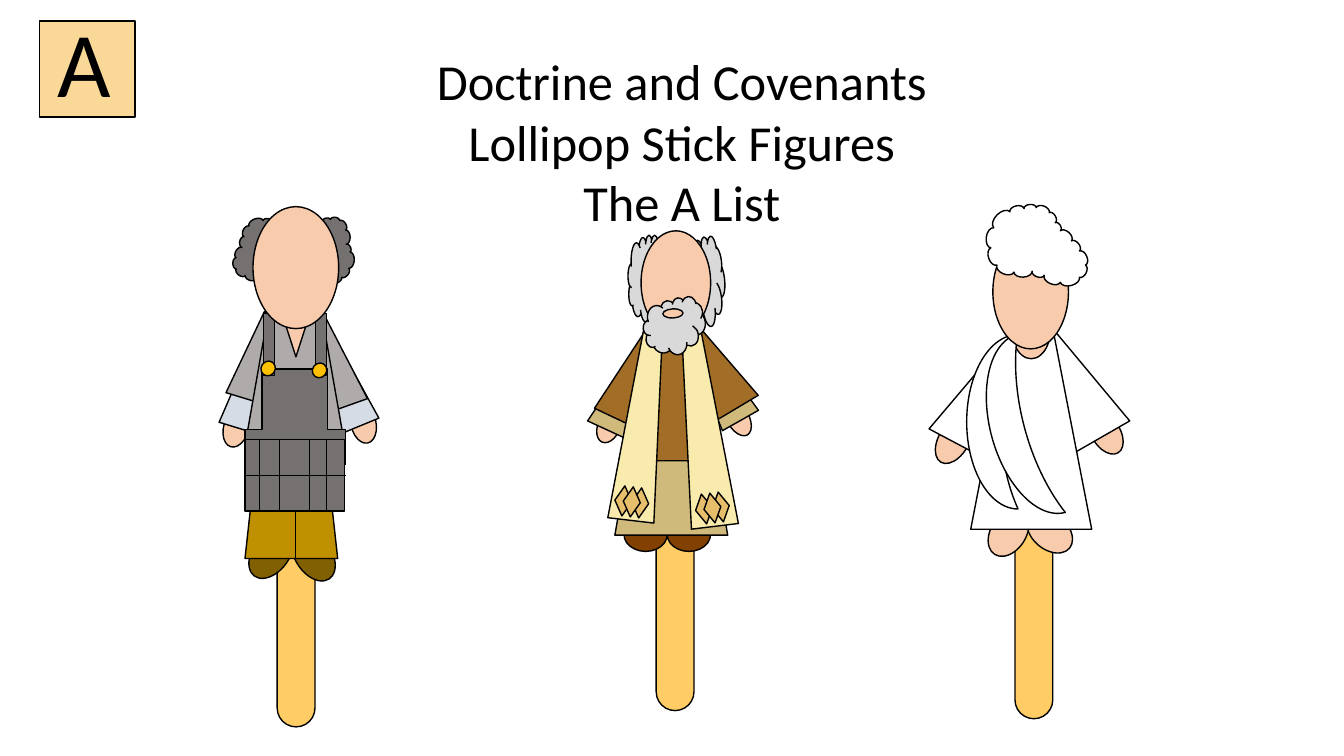
import math
from lxml import etree
from pptx import Presentation
from pptx import util as u
from pptx.dml.color import RGBColor
from pptx.enum import shapes, text
from pptx.oxml.ns import qn

Pt = u.Pt
M = shapes.MSO_SHAPE
OVAL, TRAP, CLOUD, MOON = M.OVAL, M.TRAPEZOID, M.CLOUD, M.MOON
RECT, DIAMOND, TRIANGLE = M.RECTANGLE, M.DIAMOND, M.ISOSCELES_TRIANGLE
LINE, OUTLINE = "line", "outline"

BLACK = RGBColor(0x00, 0x00, 0x00)
WHITE = RGBColor(0xFF, 0xFF, 0xFF)
SKIN = RGBColor(0xF8, 0xCB, 0xAD)
STICK = RGBColor(0xFF, 0xCC, 0x66)
BADGE = RGBColor(0xFA, 0xD9, 0x98)
SHOE = RGBColor(0x82, 0x41, 0x00)
TUNIC = RGBColor(0xCF, 0xB9, 0x7B)
COAT = RGBColor(0xA2, 0x6D, 0x26)
STOLE = RGBColor(0xF9, 0xEB, 0xAD)
BEARD = RGBColor(0xD9, 0xD9, 0xD9)
GEM = RGBColor(0xE7, 0xBE, 0x6B)
BOOT = RGBColor(0x80, 0x60, 0x00)
TROUSERS = RGBColor(0xBF, 0x90, 0x00)
CUFF = RGBColor(0xD6, 0xDC, 0xE5)
SHIRT = RGBColor(0xAF, 0xAB, 0xAB)
APRON = RGBColor(0x76, 0x71, 0x71)
BUTTON = RGBColor(0xFF, 0xC0, 0x00)

white_hair = [(740.2, 148.3), (749.5, 151.9), (753.8, 159.1), (757.4, 164.9), (765.4, 172.1),
              (771.1, 179.3), (775.4, 189.4), (771.1, 198), (757.4, 201.6), (745.9, 196.6),
              (737.3, 193.7), (724.3, 194.4), (712.1, 189.4), (707.8, 177.1), (709.9, 162.7),
              (721.4, 151.2), (731.5, 149)]
left_hair = [(195.8, 157.7), (202.3, 161.3), (203.8, 169.2), (200.2, 178.6), (200.9, 185),
             (195.1, 195.1), (187.9, 198.7), (178.6, 198.7), (171.4, 195.1), (169.9, 187.2),
             (172.8, 179.3), (172.8, 171.4), (175, 163.4), (184.3, 157.7), (190.8, 157.7)]
right_hair = [(231.1, 201.6), (224.6, 200.2), (221, 193), (221.8, 182.9), (219.6, 177.1),
              (221.8, 165.6), (227.5, 159.8), (236.9, 157.7), (244.8, 159.1), (248.4, 166.3),
              (248.4, 175), (249.8, 182.2), (249.8, 190.8), (243.4, 198.7), (236.9, 200.9)]
apron_bib = [(187.2, 263.5), (234, 263.5), (234, 306.7), (247, 306.7),
             (247, 331.9), (175, 331.9), (175, 306.7), (187.2, 306.7)]

robed_man = [
    (OVAL, 774, 299.5, 32.4, 20.2, 58.2, SKIN),
    (OVAL, 663.1, 303.8, 36, 21.6, 120.1, SKIN),
    (TRAP, 680.4, 239, 45.4, 82.8, 27.9, WHITE, 0.4),
    (TRAP, 740.9, 236.9, 49, 81.4, 330.1, WHITE, 0.29),
    (OVAL, 731.5, 367.2, 36.7, 25.2, 39.8, SKIN),
    (OVAL, 702, 367.9, 36.7, 25.2, 302.7, SKIN),
    (TRAP, 693.4, 239.8, 86.4, 138.2, 0, WHITE, 0.31),
    (OVAL, 722.9, 215.3, 27.4, 41, 0, SKIN),
    (MOON, 690.5, 239, 36.7, 124.6, 0, WHITE, 0.66),
    (MOON, 707.8, 241.2, 36.7, 131.8, 345, WHITE, 0.66),
    (OVAL, 709.2, 167.8, 54, 81.4, 0, SKIN),
    (OUTLINE, white_hair, 0.3, 0, WHITE),
]

bearded_man = [
    (OVAL, 445.7, 369.4, 31, 24.5, 0, SHOE),
    (OVAL, 476.6, 369.4, 31, 24.5, 0, SHOE),
    (OVAL, 427, 292.3, 15.8, 24.5, 23.3, SKIN),
    (TRAP, 433.4, 238.3, 40.3, 74.2, 24.7, TUNIC, 0.3),
    (TRAP, 437.8, 233.3, 31.7, 68.4, 25.4, COAT, 0.3),
    (TRAP, 439.2, 242.6, 80.6, 139.7, 0, TUNIC, 0.3),
    (TRAP, 442.1, 233.3, 74.2, 95.8, 0, COAT, 0.3),
    (TRAP, 442.1, 234, 33.1, 138.2, 6.7, STOLE, 0.3),
    (CLOUD, 448.6, 167.8, 24.5, 61.9, 0, BEARD),
    (CLOUD, 489.6, 169.2, 28.1, 64.1, 352.9, BEARD),
    (OVAL, 457.9, 164.9, 49.7, 74.2, 0, SKIN),
    (OVAL, 519.1, 284.4, 15.8, 28.1, 330.9, SKIN),
    (TRAP, 495.4, 229, 29.5, 76.3, 330.5, TUNIC, 0.3),
    (TRAP, 492.5, 234.7, 36, 61.2, 329.2, COAT, 0.3),
    (TRAP, 485.3, 234.7, 33.8, 141.8, 353.1, STOLE, 0.3),
    (CLOUD, 459.4, 213.1, 44.6, 40.3, 352.9, BEARD),
    (OVAL, 477.4, 216.7, 6.5, 14.4, 87.1, SKIN),
]
for x, y, slope, rot in [(439.2, 347, 0.12, 5.7), (496.8, 352.8, -0.12, 350)]:
    for dx in (0, 12, 6):
        bearded_man.append((DIAMOND, x + dx, y + slope * dx, 12.2, 21.6, rot, GEM))

apron_man = [
    (OVAL, 180.7, 375.1, 25.9, 40.3, 36.6, BOOT),
    (OVAL, 211, 376.6, 25.9, 40.3, 326.3, BOOT),
    (OVAL, 250.6, 288, 18, 28.8, 347.4, SKIN),
    (OVAL, 159.8, 290.9, 18, 28.8, 16, SKIN),
    (TRAP, 175, 308.2, 66.2, 90.7, 0, TROUSERS, 0.15),
    (TRAP, 218.9, 226.1, 37.4, 82.8, 337.6, CUFF),
    (TRAP, 214.6, 223.9, 37.4, 69.1, 340.4, SHIRT),
    (TRAP, 167.8, 226.1, 37.4, 82.8, 17, CUFF),
    (TRAP, 169.9, 223.9, 37.4, 63.4, 17, SHIRT),
    (TRAP, 175, 216.7, 71.3, 101.5, 0, SHIRT),
    (TRIANGLE, 200.9, 222.5, 20.9, 32.4, 180, SKIN),
    (LINE, 211, 348.5, 211, 398.9),
    (OUTLINE, apron_bib, 0, 0, APRON),
    (RECT, 169.9, 241.9, 44.6, 7.9, 270, APRON),
    (RECT, 207.4, 241.9, 43.9, 7.9, 270, APRON),
    (OUTLINE, left_hair, 0.3, 10, APRON),
    (OUTLINE, right_hair, 0.3, 173.9, APRON),
    (OVAL, 180.7, 147.6, 61.2, 87.1, 0, SKIN),
    (RECT, 175, 313.9, 71.3, 51.1, 0, APRON),
    (OVAL, 186.5, 257.8, 10.1, 10.8, 36.6, BUTTON),
    (OVAL, 223.2, 259.2, 10.1, 10.8, 36.6, BUTTON),
    (LINE, 175, 339.8, 247, 339.8),
]
apron_man += [(LINE, x, 313.9, x, 364.3) for x in (185, 199.4, 221, 233.3)]

sticks = [(M.ROUNDED_RECTANGLE, x, y, 27, 225.4, 0, STICK, 0.5)
          for x, y in [(198, 293.8), (725, 288), (468.7, 282.2)]]
badge = [(RECT, 28.1, 15.1, 68.4, 68.4, 0, BADGE)]


def scallop(points, bulge):
    steps = 8 if bulge else 1
    curve = []
    for (x1, y1), (x2, y2) in zip(points, points[1:] + points[:1]):
        dx, dy = x2 - x1, y2 - y1
        for i in range(1, steps + 1):
            angle = math.pi * i / steps
            along, out = (1 - math.cos(angle)) / 2, bulge * math.sin(angle)
            curve.append((Pt(x1 + along * dx + out * dy), Pt(y1 + along * dy - out * dx)))
    return curve


def write(parent, box, lines, size, align):
    tb = parent.add_textbox(*map(Pt, box))
    tf = tb.text_frame
    tf.word_wrap = True
    tf.auto_size = text.MSO_AUTO_SIZE.SHAPE_TO_FIT_TEXT
    for i, words in enumerate(lines):
        p = tf.add_paragraph() if i else tf.paragraphs[0]
        p.alignment = align
        r = p.add_run()
        r.text = words
        for name, value in {"name": "Calibri", "size": Pt(size)}.items():
            setattr(r.font, name, value)
        r.font.color.rgb = BLACK


prs = Presentation()
prs.slide_width, prs.slide_height = Pt(960), Pt(540)
s = prs.slides.add_slide(prs.slide_layouts[6])

for parts in (sticks, robed_man, bearded_man, apron_man, badge):
    group = s.shapes if parts is sticks else s.shapes.add_group_shape().shapes
    for kind, *values in parts:
        if kind == LINE:
            sp = group.add_connector(shapes.MSO_CONNECTOR.STRAIGHT, *map(Pt, values))
            sp.line.color.rgb = BLACK
            sp.line.width = Pt(0.5)
            etree.SubElement(sp._element.spPr, qn("a:effectLst"))
            continue
        if kind == OUTLINE:
            points, bulge, rot, fill = values
            curve = scallop(points, bulge)
            fb = group.build_freeform(*curve[-1])
            fb.add_line_segments(curve[:-1], close=True)
            sp = fb.convert_to_shape()
        else:
            *box, rot, fill = values[:6]
            sp = group.add_shape(kind, *map(Pt, box))
            for i, adj in enumerate(values[6:]):
                sp.adjustments[i] = adj
        sp.rotation = rot
        sp.shadow.inherit = False
        sp.fill.solid()
        sp.fill.fore_color.rgb = fill
        sp.line.color.rgb = BLACK
        sp.line.width = Pt(1)
    if parts is badge:
        write(group, (33.8, 0, 64.1, 87.1), ["A"], 66, text.PP_ALIGN.LEFT)
    if parts is sticks:
        write(group, (282.2, 32.4, 409.7, 181.4),
              ["Doctrine and Covenants", "Lollipop Stick Figures", "The A List"],
              36, text.PP_ALIGN.CENTER)

prs.save("out.pptx")
